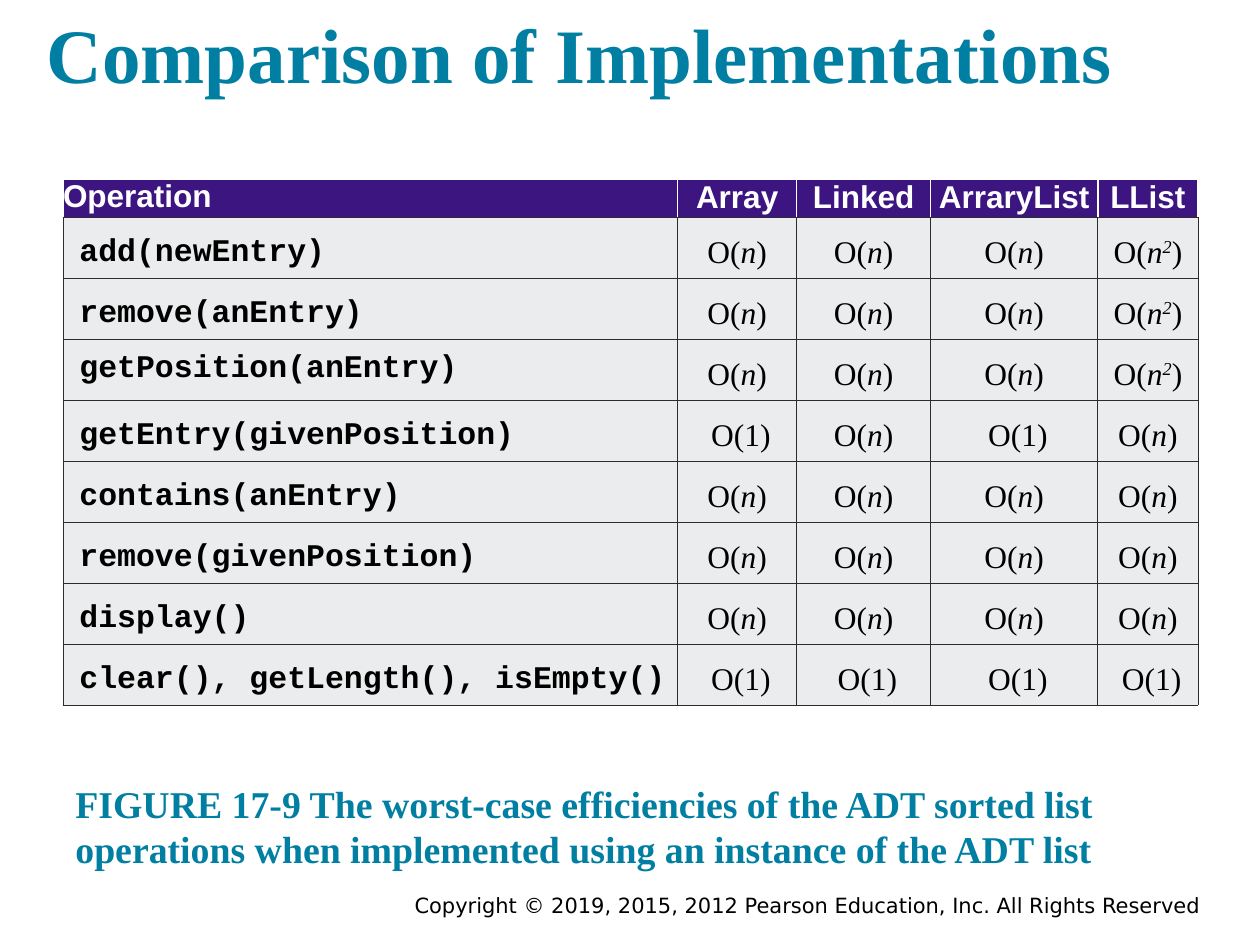
from lxml.etree import SubElement
from pptx import Presentation
from pptx.dml.color import RGBColor
from pptx.enum.text import MSO_ANCHOR, PP_ALIGN
from pptx.oxml.ns import qn
from pptx.util import Cm, Pt

COLOURS = {
    "teal": "007FA3",
    "purple": "3C1581",
    "grey": "EBECED",
    "rule": "2F2A2B",
    "white": "FFFFFF",
    "black": "000000",
}
HEADINGS = ["Operation", "Array", "Linked", "ArraryList", "LList"]
COST_WIDTHS = [2.4, 2.7, 3.37, 2.02]
HEADER_HEIGHT = 0.7
EFFICIENCIES = [
    ("add(newEntry)", ["n", "n", "n", "n2"]),
    ("remove(anEntry)", ["n", "n", "n", "n2"]),
    ("getPosition(anEntry)", ["n", "n", "n", "n2"]),
    ("getEntry(givenPosition)", ["1", "n", "1", "n"]),
    ("contains(anEntry)", ["n", "n", "n", "n"]),
    ("remove(givenPosition)", ["n", "n", "n", "n"]),
    ("display()", ["n", "n", "n", "n"]),
    ("clear(), getLength(), isEmpty()", ["1", "1", "1", "1"]),
]
COST_PARTS = {
    "1": [("O(1)", False, 0)],
    "n": [("O(", False, 0), ("n", True, 0), (")", False, 0)],
    "n2": [("O(", False, 0), ("n", True, 0), ("2", True, 32), (")", False, 0)],
}
TITLE_FONT = {"name": "Times New Roman", "size": Pt(44), "bold": True}
CAPTION_FONT = {"name": "Times New Roman", "size": Pt(21.6), "bold": True}
FOOTER_FONT = {"name": "DejaVu Sans", "size": Pt(12), "bold": False}
HEADING_FONT = {"name": "Arial", "size": Pt(18), "bold": True}
CODE_FONT = {"name": "Courier New", "size": Pt(18), "bold": True}
COST_FONT = {"name": "Times New Roman", "size": Pt(18), "bold": False}


def set_attributes(target, values):
    for name, value in values.items():
        setattr(target, name, value)


def add_span(para, text, font, colour, italic=False, raised=0):
    span = para.add_run()
    span.text = text
    set_attributes(span.font, {**font, "italic": italic})
    span.font.color.rgb = RGBColor.from_string(COLOURS[colour])
    if raised:
        span.font._element.set("baseline", str(raised * 1000))


def add_text(page, box, text, font, colour, anchor, align, inset):
    frame = page.shapes.add_textbox(*map(Cm, box)).text_frame
    sides = ("margin_left", "margin_top", "margin_right", "margin_bottom")
    set_attributes(frame, dict.fromkeys(sides, Cm(inset)))
    set_attributes(frame, {"word_wrap": True, "vertical_anchor": anchor})
    para = frame.paragraphs[0]
    para.alignment = align
    add_span(para, text, font, colour)


def style_cell(cell, fill, side_rule, side_width, inset, anchor):
    set_attributes(cell, {
        "margin_left": Cm(inset),
        "margin_right": Cm(inset),
        "margin_top": 0,
        "margin_bottom": 0,
        "vertical_anchor": anchor,
    })
    properties = cell._tc.get_or_add_tcPr()
    for side in "LRTB":
        colour, width = ("rule", 0.5) if side == "B" else (side_rule, side_width)
        line = SubElement(properties, qn(f"a:ln{side}"), w=str(Pt(width)))
        solid = SubElement(line, qn("a:solidFill"))
        SubElement(solid, qn("a:srgbClr"), val=COLOURS[colour])
    cell.fill.solid()
    cell.fill.fore_color.rgb = RGBColor.from_string(COLOURS[fill])


def fill_heading(cell, text, first):
    anchor = MSO_ANCHOR.TOP if first else MSO_ANCHOR.MIDDLE
    style_cell(cell, "purple", "white", 1, 0, anchor)
    para = cell.text_frame.paragraphs[0]
    para.alignment = PP_ALIGN.LEFT if first else PP_ALIGN.CENTER
    add_span(para, text, HEADING_FONT, "white")


def fill_body(cell, parts, font, align, spacing, indented):
    style_cell(cell, "grey", "rule", 0.5, 0.18, MSO_ANCHOR.MIDDLE)
    para = cell.text_frame.paragraphs[0]
    set_attributes(para, {
        "alignment": align,
        "line_spacing": spacing,
        "space_before": Pt(2),
    })
    if indented:
        para._p.get_or_add_pPr().set("marL", str(Cm(0.15)))
    for text, italic, raised in parts:
        add_span(para, text, font, "black", italic, raised)


def add_efficiency_table(page, box):
    left, top, width, height = box
    row_count = len(EFFICIENCIES) + 1
    table = page.shapes.add_table(
        row_count, len(HEADINGS), Cm(left), Cm(top), Cm(width), Cm(height)
    ).table
    table.horz_banding = False
    widths = [width - sum(COST_WIDTHS), *COST_WIDTHS]
    for column, column_width in zip(table.columns, widths):
        column.width = Cm(column_width)
    body_height = (height - HEADER_HEIGHT) / len(EFFICIENCIES)
    for index, row in enumerate(table.rows):
        row.height = Cm(body_height if index else HEADER_HEIGHT)
    for index, heading in enumerate(HEADINGS):
        fill_heading(table.cell(0, index), heading, index == 0)
    for row, (operation, costs) in enumerate(EFFICIENCIES, 1):
        spacing = 1.0 if operation.startswith("getPosition") else 1.3
        fill_body(table.cell(row, 0), [(operation, False, 0)], CODE_FONT,
                  PP_ALIGN.LEFT, spacing, True)
        for column, cost in enumerate(costs, 1):
            fill_body(table.cell(row, column), COST_PARTS[cost], COST_FONT,
                      PP_ALIGN.CENTER, 1.3, cost == "1")


def main():
    deck = Presentation()
    set_attributes(deck, {"slide_width": Cm(25.4), "slide_height": Cm(19.05)})
    page = deck.slides.add_slide(deck.slide_layouts[6])
    add_text(page, (4.45, 17.86, 19.89, 0.79),
             "Copyright © 2019, 2015, 2012 Pearson Education, Inc. All Rights Reserved",
             FOOTER_FONT, "black", MSO_ANCHOR.TOP, PP_ALIGN.RIGHT, 0.13)
    add_text(page, (0.69, 0, 23.65, 2.24), "Comparison of Implementations",
             TITLE_FONT, "teal", MSO_ANCHOR.BOTTOM, PP_ALIGN.LEFT, 0.25)
    add_text(page, (1.27, 15.57, 22.86, 2.24),
             "FIGURE 17-9 The worst-case efficiencies of the ADT sorted list "
             "operations when implemented using an instance of the ADT list",
             CAPTION_FONT, "teal", MSO_ANCHOR.BOTTOM, PP_ALIGN.LEFT, 0.25)
    add_efficiency_table(page, (1.27, 3.61, 22.88, 10.54))
    deck.save("out.pptx")


if __name__ == "__main__":
    main()
